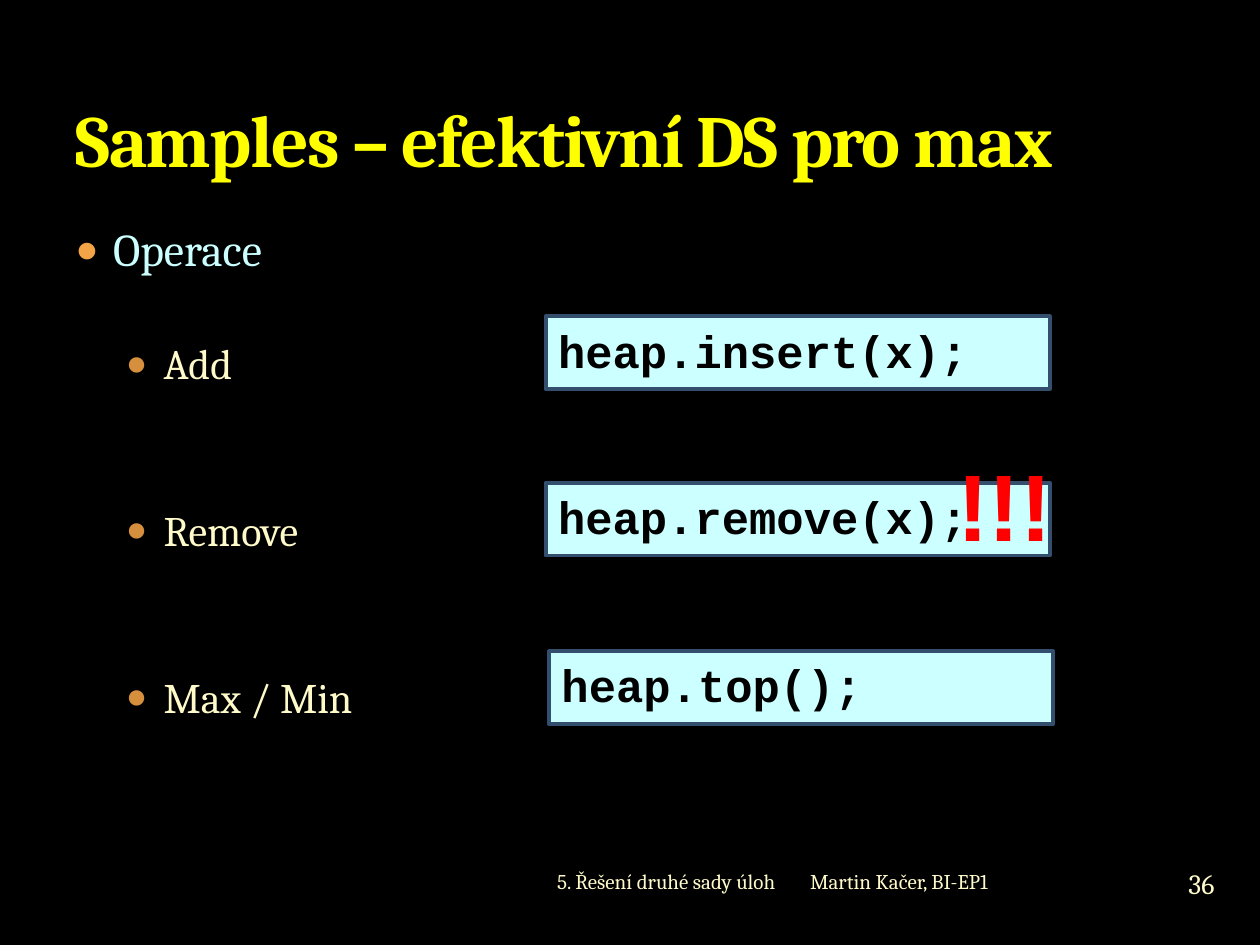
from lxml.etree import SubElement
from pptx import Presentation
from pptx.dml.color import RGBColor
from pptx.enum.shapes import MSO_SHAPE
from pptx.enum.text import MSO_ANCHOR, MSO_AUTO_SIZE, PP_ALIGN
from pptx.oxml.ns import qn
from pptx.util import Cm, Pt

COLORS = {
    "background": "000000", "title": "FFFF00", "topic": "CCFFFF",
    "text": "FEFAC9", "topic_bullet": "F3A447", "operation_bullet": "D6903D",
    "code_fill": "CCFFFF", "code_line": "344E6D", "code": "000000",
    "warning": "FF0000",
}


def color(name):
    return RGBColor.from_string(COLORS[name])


def write(paragraph, text, font_name, size, color_name, bold=False):
    paragraph.text = text
    font = paragraph.font
    font.name, font.size, font.bold = font_name, Pt(size), bold
    font.color.rgb = color(color_name)


prs = Presentation()
prs.slide_width, prs.slide_height = Cm(25.4), Cm(19.05)
slide = prs.slides.add_slide(prs.slide_layouts[5])
slide.background.fill.solid()
slide.background.fill.fore_color.rgb = color("background")

# Title
title = slide.shapes.title
title.left, title.top, title.width, title.height = Cm(1.27), Cm(0.43), Cm(22.86), Cm(3.38)
title.text_frame.vertical_anchor = MSO_ANCHOR.BOTTOM
title.text_frame.auto_size = MSO_AUTO_SIZE.NONE
heading = title.text_frame.paragraphs[0]
write(heading, "Samples – efektivní DS pro max", "Cambria", 42, "title", True)
heading.alignment = PP_ALIGN.LEFT
heading.runs[0].font._element.set("spc", "-100")

# Bulleted operations: text, level, size, colours, indent, space before, line height
operations = slide.shapes.add_textbox(Cm(1.27), Cm(4.24), Cm(6.55), Cm(12.7)).text_frame
operations.word_wrap = True
bullets = [
    ("Operace", 0, 26, "topic", "topic_bullet", 0.76, 0, 34),
    ("Add", 1, 24, "text", "operation_bullet", 1.78, 35, 29),
    ("Remove", 1, 24, "text", "operation_bullet", 1.78, 66.4, 29),
    ("Max / Min", 1, 24, "text", "operation_bullet", 1.78, 66.4, 29),
]
for i, (text, level, size, text_color, bullet_color, indent, before, line) in enumerate(bullets):
    item = operations.add_paragraph() if i else operations.paragraphs[0]
    write(item, text, "Cambria", size, text_color)
    item.level = level
    item.space_before, item.line_spacing = Pt(before), Pt(line)
    properties = item._p.get_or_add_pPr()
    properties.set("marL", str(Cm(indent)))
    properties.set("indent", str(-Cm(0.76)))
    bullet_fill = SubElement(properties, qn("a:buClr"))
    SubElement(bullet_fill, qn("a:srgbClr"), val=COLORS[bullet_color])
    SubElement(properties, qn("a:buSzPct"), val="85000")
    SubElement(properties, qn("a:buFont"), typeface="Arial")
    SubElement(properties, qn("a:buChar"), char="●")
    # Schema order: the bullet settings come before the default run properties
    defaults = properties.find(qn("a:defRPr"))
    if defaults is not None:
        properties.append(defaults)

# Footer: author, lecture and page number
footers = [
    ("Martin Kačer, BI-EP1", 16.08, 17.22, 7.19, 1.07, 12, PP_ALIGN.LEFT),
    ("5. Řešení druhé sady úloh", 5.92, 17.22, 9.96, 1.07, 12, PP_ALIGN.RIGHT),
    ("36", 23.37, 17.17, 1.7, 1.27, 16, PP_ALIGN.CENTER),
]
for text, left, top, width, height, size, alignment in footers:
    footer = slide.shapes.add_textbox(Cm(left), Cm(top), Cm(width), Cm(height)).text_frame
    footer.word_wrap = True
    footer.vertical_anchor = MSO_ANCHOR.MIDDLE
    write(footer.paragraphs[0], text, "Cambria", size, "text")
    footer.paragraphs[0].alignment = alignment

# Heap calls beside the operations
calls = [("heap.insert(x);", 11, 6.38), ("heap.remove(x);", 11, 9.73), ("heap.top();", 11.07, 13.13)]
for code, left, top in calls:
    call = slide.shapes.add_shape(MSO_SHAPE.RECTANGLE, Cm(left), Cm(top), Cm(10.16), Cm(1.47))
    call.shadow.inherit = False
    call.fill.solid()
    call.fill.fore_color.rgb = color("code_fill")
    call.line.color.rgb = color("code_line")
    call.line.width = Pt(2.25)
    call.text_frame.vertical_anchor = MSO_ANCHOR.TOP
    line = call.text_frame.paragraphs[0]
    write(line, code, "Courier New", 26, "code", True)
    line.alignment = PP_ALIGN.LEFT
    line.space_before = Pt(6)

# Warning on the remove call
warning = slide.shapes.add_textbox(Cm(19.05), Cm(8.89), Cm(2.44), Cm(2.57)).text_frame
warning.word_wrap = False
warning.auto_size = MSO_AUTO_SIZE.SHAPE_TO_FIT_TEXT
write(warning.paragraphs[0], "!!!", "Arial", 54, "warning", True)

prs.save("out.pptx")
